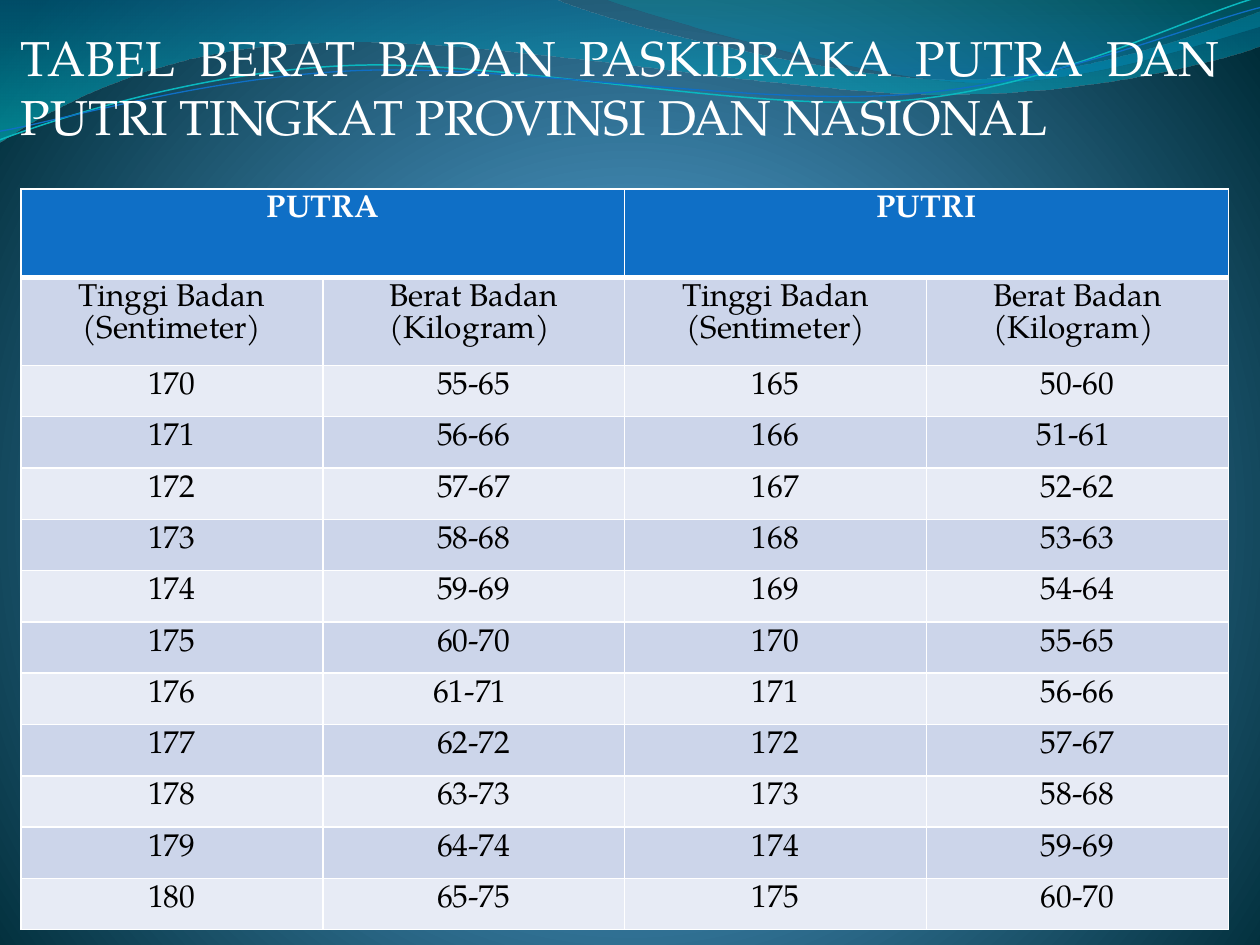
from pptx import Presentation
from pptx.dml.color import RGBColor
from pptx.enum.text import MSO_ANCHOR, PP_ALIGN
from pptx.oxml import parse_xml
from pptx.oxml.ns import nsdecls, qn
from pptx.util import Pt

COLORS = {
    "white": "FFFFFF", "black": "000000", "header": "0F6FC6",
    "band": "CCD5EA", "light": "E7EBF5", "teal": "0AB8BF",
    "sky": "4AA0D6", "blue": "4C98C7", "deep": "002C38",
    "ocean": "0074A1", "aqua": "00C6CF", "lagoon": "00A1A9", "azure": "008BBF",
}
DOWNWARD = '<a:lin ang="5400000" scaled="0"/>'
SPOTLIGHT = ('<a:path path="circle"><a:fillToRect l="10000" t="110000" '
             'r="10000" b="100000"/></a:path>')

WIDE_WAVE = [
    (0, 0), (316.8, -0.7),
    (342.7, 12.2, 478.1, 45.4, 545.8, 45.4),
    (614.2, 45.4, 689.8, 18.7, 720, 6.5), (720.7, 25.9),
    (707.8, 31.7, 626.4, 54.7, 537.1, 54),
    (447.8, 54, 275, 20.2, 185, 24.5),
    (92.9, 25.9, 33.1, 59.8, -0.7, 81.4), (0, 0),
]
RIGHT_WAVE = [
    (344.9, -0.7),
    (366.5, 7.9, 491, 44.6, 553.7, 46.8),
    (616.3, 49.7, 691.9, 23, 720, 15.1), (720, 0), (344.9, -0.7),
]
TEAL_RIPPLE = [
    (-1.4, 62.9),
    (33.8, 51.7, 114.1, 29.4, 199.8, 29.9),
    (284.8, 30.3, 425.9, 67.3, 512.5, 64.9),
    (599.1, 62.4, 676.5, 25.7, 720.2, 15.5),
]
BLUE_RIPPLE = [
    (-1.1, 58),
    (32.9, 53.8, 118.3, 32.5, 204.1, 33),
    (290.6, 33.4, 428.9, 63.8, 515.5, 61.4),
    (601.4, 59.6, 678.4, 30.1, 721.4, 21.3),
]
TITLE = "TABEL BERAT BADAN PASKIBRAKA PUTRA DAN PUTRI TINGKAT PROVINSI DAN NASIONAL"
MEASURES = ["Tinggi Badan (Sentimeter)", "Berat Badan (Kilogram) "]
WEIGHT_TABLE = [
    ["PUTRA", "", "PUTRI", ""],
    MEASURES * 2,
    ["170", "55-65", "165", "50-60"],
    ["171", "56-66", "166", "51-61 "],
    ["172", "57-67", "167", "52-62"],
    ["173", "58-68", "168", "53-63"],
    ["174", "59-69", "169", "54-64"],
    ["175", "60-70", "170", "55-65"],
    ["176", "61-71 ", "171", "56-66"],
    ["177", "62-72", "172", "57-67"],
    ["178", "63-73", "173", "58-68"],
    ["179", "64-74", "174", "59-69"],
    ["180", "65-75", "175", "60-70"],
]


class SlideBuilder:
    font = "TeX Gyre Pagella"

    def __init__(self, slide):
        self.slide = slide

    def color(self, name):
        return RGBColor.from_string(COLORS[name])

    def gradient(self, fill, owner, stops, direction):
        fill.solid()
        fill.fore_color.rgb = self.color(stops[0][1])
        stop_xml = "".join(
            f'<a:gs pos="{position * 1000}"><a:srgbClr val="{COLORS[name]}">'
            f'<a:alpha val="{opacity * 1000}"/></a:srgbClr></a:gs>'
            for position, name, opacity in stops)
        owner.replace(owner.find(qn("a:solidFill")), parse_xml(
            f'<a:gradFill {nsdecls("a")} rotWithShape="1">'
            f'<a:gsLst>{stop_xml}</a:gsLst>{direction}</a:gradFill>'))

    def background(self, stops):
        fill = self.slide.background.fill
        fill.solid()
        owner = self.slide.element.find(".//" + qn("p:bgPr"))
        self.gradient(fill, owner, stops, SPOTLIGHT)

    def curve(self, segments, box, close):
        left, top, width, height = (Pt(length) for length in box)
        anchors = [(Pt(segment[-2]), Pt(segment[-1])) for segment in segments]
        builder = self.slide.shapes.build_freeform(*anchors[0])
        builder.add_line_segments(anchors[1:], close=close)
        shape = builder.convert_to_shape()
        shape.left, shape.top, shape.width, shape.height = left, top, width, height
        outline = shape.element.find(".//" + qn("a:path"))
        outline.set("w", str(width))
        outline.set("h", str(height))
        for step in list(outline):
            outline.remove(step)
        for index, segment in enumerate(segments):
            kind = ("cubicBezTo" if len(segment) == 6 else "lnTo") if index else "moveTo"
            points = "".join(
                f'<a:pt x="{Pt(x) - left}" y="{Pt(y) - top}"/>'
                for x, y in zip(segment[::2], segment[1::2]))
            outline.append(parse_xml(f'<a:{kind} {nsdecls("a")}>{points}</a:{kind}>'))
        if close:
            outline.append(parse_xml(f'<a:close {nsdecls("a")}/>'))
        shape.shadow.inherit = False
        return shape

    def wave(self, segments, box, stops):
        shape = self.curve(segments, box, True)
        self.gradient(shape.fill, shape.element.spPr, stops, DOWNWARD)
        shape.line.fill.background()

    def ripple(self, segments, box, color, width):
        shape = self.curve(segments, box, False)
        shape.rotation = 357.3
        shape.fill.background()
        shape.line.color.rgb = self.color(color)
        shape.line.width = Pt(width)

    def style(self, paragraph, size, color, align, bold=False):
        paragraph.alignment = align
        for run in paragraph.runs:
            run.font.name = self.font
            run.font.size = Pt(size)
            run.font.bold = bold
            run.font.color.rgb = self.color(color)

    def title(self, text, left, top, width, height):
        box = self.slide.shapes.add_textbox(Pt(left), Pt(top), Pt(width), Pt(height))
        frame = box.text_frame
        frame.word_wrap = True
        frame.vertical_anchor = MSO_ANCHOR.TOP
        frame.margin_left, frame.margin_right = Pt(0), Pt(1.44)
        frame.text = text
        paragraph = frame.paragraphs[0]
        paragraph.space_before = Pt(5.6)
        self.style(paragraph, 28, "white", PP_ALIGN.JUSTIFY)
        paragraph._p.get_or_add_pPr().set("marR", str(Pt(3.6)))

    def borders(self, cell, widths):
        properties = cell._tc.get_or_add_tcPr()
        for side, width in zip("LRTB", widths):
            properties.append(parse_xml(
                f'<a:ln{side} {nsdecls("a")} w="{Pt(width)}"><a:solidFill>'
                f'<a:srgbClr val="{COLORS["white"]}"/></a:solidFill></a:ln{side}>'))

    def table(self, rows, left, top, width, heights):
        table = self.slide.shapes.add_table(
            len(rows), len(rows[0]), Pt(left), Pt(top), Pt(width), Pt(sum(heights))).table
        table.first_row = table.horz_banding = False
        for column in table.columns:
            column.width = Pt(width / len(rows[0]))
        for index, (values, height) in enumerate(zip(rows, heights)):
            table.rows[index].height = Pt(height)
            heading = index == 0
            fill = "header" if heading else "band" if index % 2 else "light"
            for cell, value in zip(table.rows[index].cells, values):
                self.borders(cell, (1, 1, 3 if index == 1 else 1, 3 if heading else 1))
                cell.fill.solid()
                cell.fill.fore_color.rgb = self.color(fill)
                cell.text_frame.text = value
                self.style(cell.text_frame.paragraphs[0], 18,
                           "white" if heading else "black", PP_ALIGN.CENTER, heading)
        for first in range(0, len(rows[0]), 2):
            table.cell(0, first).merge(table.cell(0, first + 1))


def main():
    presentation = Presentation()
    presentation.slide_width, presentation.slide_height = Pt(720), Pt(540)
    page = SlideBuilder(presentation.slides.add_slide(presentation.slide_layouts[6]))
    page.background([(0, "sky", 100), (25, "blue", 100), (100, "deep", 100)])
    page.wave(WIDE_WAVE, (-0.7, -0.7, 721.4, 82.1), [(0, "ocean", 45), (100, "aqua", 55)])
    page.wave(RIGHT_WAVE, (344.9, -0.7, 375.1, 50.4), [(0, "lagoon", 30), (80, "azure", 45)])
    page.ripple(TEAL_RIPPLE, (-1.4, 15.8, 721.4, 51.1), "teal", 0.85)
    page.ripple(BLUE_RIPPLE, (-1.4, 21.6, 722.2, 41.8), "header", 0.75)
    page.title(TITLE, 12, 12, 690, 516)
    page.table(WEIGHT_TABLE, 12, 108, 690, [50.4] * 2 + [29.33] * 11)
    presentation.save("out.pptx")


if __name__ == "__main__":
    main()
